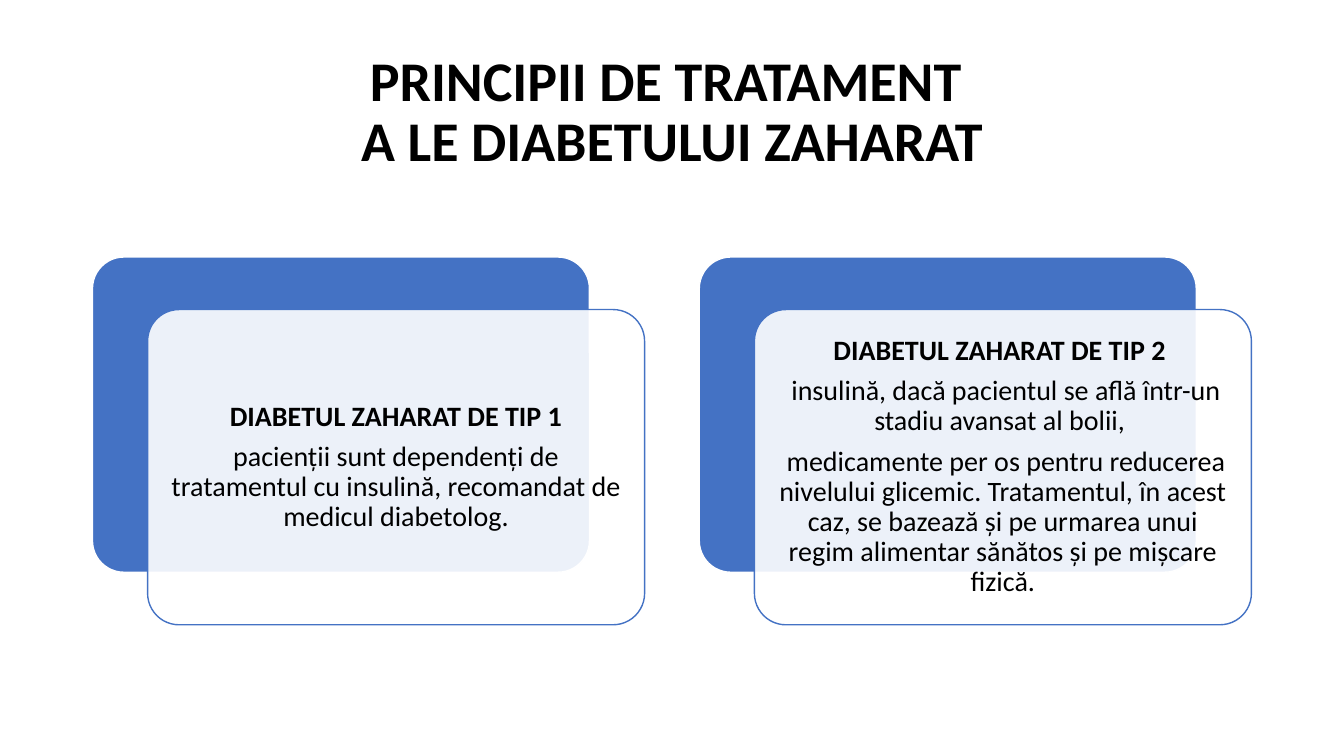
"""Build a slide comparing the treatment of two types of diabetes."""
from dataclasses import dataclass
from typing import Any, NamedTuple

from lxml import etree
from pptx import Presentation, util as u
from pptx.dml import color
from pptx.enum import shapes, text
from pptx.oxml import ns

SLIDE_WIDTH, SLIDE_HEIGHT = u.Inches(13.33), u.Inches(7.5)


@dataclass(frozen=True)
class Theme:
    """Colours, type sizes and spacing of the slide."""
    font: str = "Calibri"
    ink: str = "000000"
    accent: str = "4472C4"
    paper: str = "FFFFFF"
    title_size: float = 40
    body_size: float = 20
    paragraph_gap: float = 7
    line_spacing: float = 0.9
    text_margin: float = 0.09
    outline: float = 1
    corner: float = 0.1
    panel_opacity: int = 90


class Area(NamedTuple):
    """A rectangle in percent of the slide's width and height."""
    left: float
    top: float
    width: float
    height: float

    def moved(self, right: float, down: float = 0) -> "Area":
        """Return the area shifted by the given shares."""
        return Area(self.left + right, self.top + down, self.width, self.height)

    def shrunk(self, across: float, down: float) -> "Area":
        """Return the area with a margin taken off every side."""
        return Area(self.left + across, self.top + down,
                    self.width - 2 * across, self.height - 2 * down)

    def lengths(self) -> tuple[int, int, int, int]:
        """Return left, top, width and height in slide units."""
        return (int(SLIDE_WIDTH * self.left / 100), int(SLIDE_HEIGHT * self.top / 100),
                int(SLIDE_WIDTH * self.width / 100), int(SLIDE_HEIGHT * self.height / 100))


class Treatment(NamedTuple):
    """The heading and advice of one card."""
    heading: str
    advice: tuple[str, ...]


THEME = Theme()
TITLE = "PRINCIPII DE TRATAMENT \vA LE DIABETULUI ZAHARAT"
TITLE_AREA = Area(6.88, 5.33, 86.25, 19.33)
CARD_AREA = Area(6.88, 34, 36.98, 41.7)
CARD_PITCH = 45.15
PANEL_SHIFT = (4.1, 6.95)
PANEL_MARGIN = (0.68, 1.2)
TREATMENTS = (
    Treatment("DIABETUL ZAHARAT DE TIP 1", (
        "pacienții sunt dependenți de tratamentul cu insulină, "
        "recomandat de medicul diabetolog.",
    )),
    Treatment("DIABETUL ZAHARAT DE TIP 2 ", (
        " insulină, dacă pacientul se află într-un stadiu avansat al bolii, ",
        " medicamente per os pentru reducerea nivelului glicemic. Tratamentul, "
        "în acest caz, se bazează și pe urmarea unui regim alimentar sănătos "
        "și pe mișcare fizică.",
    )),
)


def apply_format(target: Any, values: dict[str, Any]) -> None:
    """Set each named attribute on the target."""
    for name, value in values.items():
        setattr(target, name, value)


def format_paragraph(para: Any, size: float, bold: bool, gap: float = 0) -> None:
    """Centre a paragraph and style its text."""
    apply_format(para, {"alignment": text.PP_ALIGN.CENTER, "space_before": u.Pt(0),
                        "space_after": u.Pt(gap), "line_spacing": THEME.line_spacing})
    for span in para.runs:
        apply_format(span.font, {"name": THEME.font, "size": u.Pt(size), "bold": bold})
        span.font.color.rgb = color.RGBColor.from_string(THEME.ink)


def add_title(page: Any) -> None:
    """Place and format the title placeholder."""
    box = page.shapes.title
    apply_format(box, dict(zip(("left", "top", "width", "height"), TITLE_AREA.lengths())))
    box.text_frame.text = TITLE
    apply_format(box.text_frame, {"vertical_anchor": text.MSO_ANCHOR.MIDDLE,
                                  "auto_size": text.MSO_AUTO_SIZE.NONE, "word_wrap": True})
    format_paragraph(box.text_frame.paragraphs[0], THEME.title_size, True)


def add_panel(page: Any, area: Area, fill: str, line: str, opacity: int = 100) -> None:
    """Draw a rounded panel."""
    panel = page.shapes.add_shape(shapes.MSO_SHAPE.ROUNDED_RECTANGLE, *area.lengths())
    panel.adjustments[0] = THEME.corner
    panel.shadow.inherit = False
    panel.fill.solid()
    panel.fill.fore_color.rgb = color.RGBColor.from_string(fill)
    panel.line.color.rgb = color.RGBColor.from_string(line)
    panel.line.width = u.Pt(THEME.outline)
    if opacity < 100:
        tint = panel.fill._xPr.find(ns.qn("a:solidFill"))[0]
        etree.SubElement(tint, ns.qn("a:alpha"), val=str(opacity * 1000))


def add_advice(page: Any, area: Area, treatment: Treatment) -> None:
    """Write a bold heading and its advice in a text box."""
    frame = page.shapes.add_textbox(*area.lengths()).text_frame
    sides = ("left", "top", "right", "bottom")
    apply_format(frame, {f"margin_{side}": u.Inches(THEME.text_margin) for side in sides})
    apply_format(frame, {"word_wrap": True, "vertical_anchor": text.MSO_ANCHOR.MIDDLE})
    frame.text = "\n".join((treatment.heading, *treatment.advice))
    for index, para in enumerate(frame.paragraphs):
        format_paragraph(para, THEME.body_size, index == 0, THEME.paragraph_gap)


def add_card(page: Any, area: Area, treatment: Treatment) -> None:
    """Draw the two overlapping panels of a card and its text."""
    front = area.moved(*PANEL_SHIFT)
    add_panel(page, area, THEME.accent, THEME.paper)
    add_panel(page, front, THEME.paper, THEME.accent, THEME.panel_opacity)
    add_advice(page, front.shrunk(*PANEL_MARGIN), treatment)


def main() -> None:
    """Build and save the deck."""
    deck = Presentation()
    apply_format(deck, {"slide_width": SLIDE_WIDTH, "slide_height": SLIDE_HEIGHT})
    page = deck.slides.add_slide(deck.slide_layouts.get_by_name("Title Only"))
    add_title(page)
    for index, treatment in enumerate(TREATMENTS):
        add_card(page, CARD_AREA.moved(index * CARD_PITCH), treatment)
    deck.save("out.pptx")


if __name__ == "__main__":
    main()
